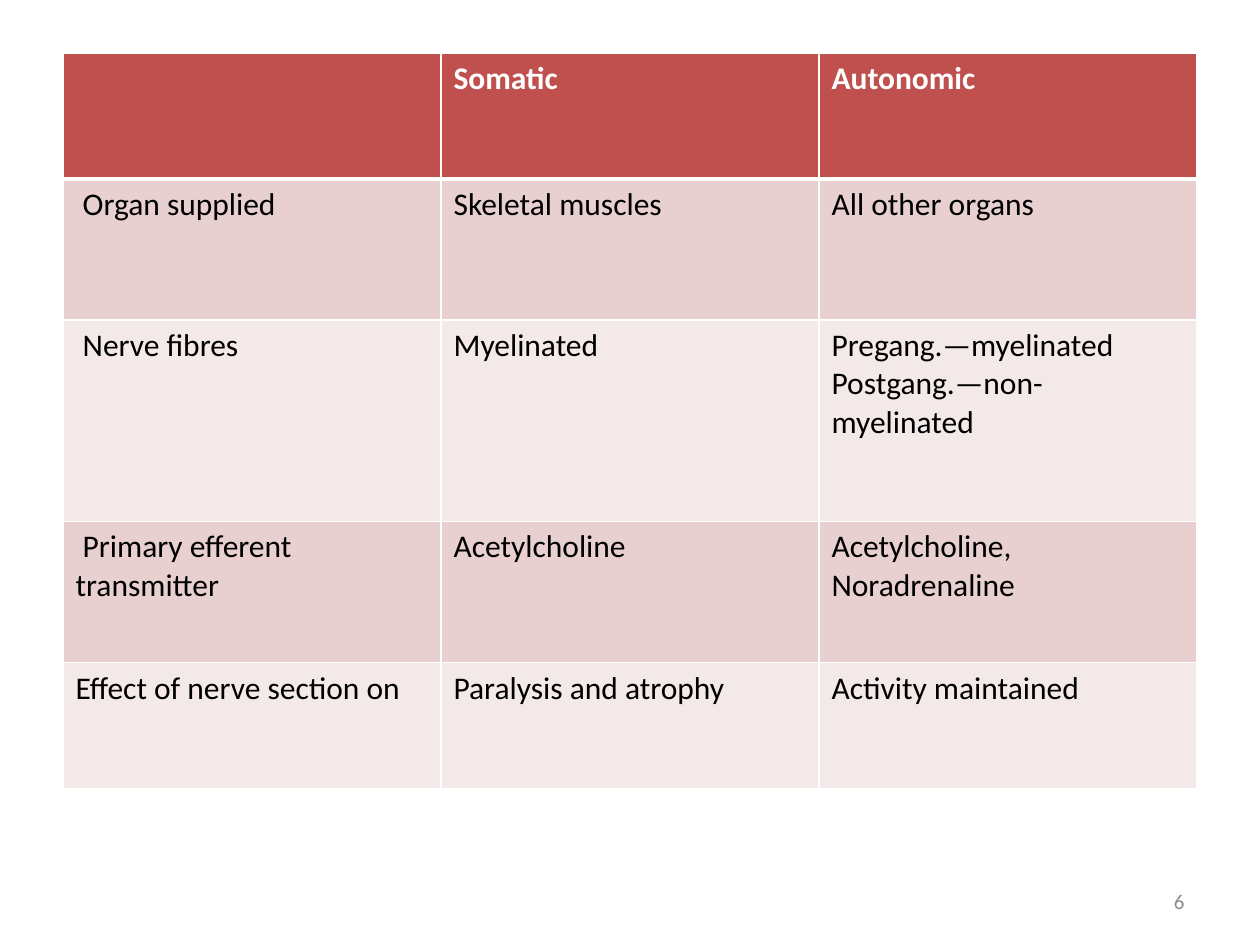
"""Build a slide comparing the somatic and autonomic nervous systems."""
from lxml.etree import SubElement
from pptx import Presentation
from pptx.dml.color import RGBColor
from pptx.enum.text import MSO_ANCHOR, PP_ALIGN
from pptx.oxml.ns import qn
from pptx.util import Inches, Pt

ROWS = [
    ("", "Somatic", "Autonomic"),
    (" Organ supplied", "Skeletal muscles", "All other organs"),
    (" Nerve fibres", "Myelinated", "Pregang.—myelinated\nPostgang.—non-myelinated"),
    (" Primary efferent transmitter", "Acetylcholine", "Acetylcholine, Noradrenaline"),
    ("Effect of nerve section on", "Paralysis and atrophy", "Activity maintained"),
]
ROW_HEIGHTS = [1, 1.12, 1.6, 1.12, 1]
COLUMN_WIDTH = 3
HEADER_FILL = "C0504D"
BAND_FILLS = ["E8D0D0", "F4E9E9"]
WHITE, BLACK, GRAY = "FFFFFF", "000000", "8C8C8C"


def color(value):
    return RGBColor.from_string(value)


def write_text(text_frame, text, size=18, fill=BLACK, bold=False, align=PP_ALIGN.LEFT):
    text_frame.word_wrap = True
    text_frame.text = text
    for paragraph in text_frame.paragraphs:
        paragraph.alignment = align
        font = paragraph.font
        font.name, font.size, font.bold = "Calibri", Pt(size), bold
        font.color.rgb = color(fill)
        for run in paragraph.runs:
            run.font.name, run.font.size, run.font.bold = "Calibri", Pt(size), bold
            run.font.color.rgb = color(fill)


def set_borders(cell, **widths):
    properties = cell._tc.get_or_add_tcPr()
    for side in ("L", "R", "T", "B"):
        line = SubElement(properties, qn(f"a:ln{side}"), w=str(Pt(widths.get(side, 1))))
        fill = SubElement(line, qn("a:solidFill"))
        SubElement(fill, qn("a:srgbClr"), val=WHITE)


def add_comparison_table(slide):
    column_count = len(ROWS[0])
    table = slide.shapes.add_table(
        len(ROWS), column_count, Inches(0.5), Inches(0.42),
        Inches(COLUMN_WIDTH * column_count), Inches(sum(ROW_HEIGHTS)),
    ).table
    for column in table.columns:
        column.width = Inches(COLUMN_WIDTH)
    for row_index, (texts, height) in enumerate(zip(ROWS, ROW_HEIGHTS)):
        header = row_index == 0
        table.rows[row_index].height = Inches(height)
        for column_index, text in enumerate(texts):
            cell = table.cell(row_index, column_index)
            set_borders(cell, B=3 if header else 1, T=3 if row_index == 1 else 1)
            cell.fill.solid()
            cell.fill.fore_color.rgb = color(HEADER_FILL if header else BAND_FILLS[(row_index - 1) % 2])
            write_text(cell.text_frame, text, fill=WHITE if header else BLACK, bold=header)


def add_page_number(slide, number):
    box = slide.shapes.add_textbox(Inches(7.17), Inches(6.95), Inches(2.33), Inches(0.4))
    box.text_frame.vertical_anchor = MSO_ANCHOR.MIDDLE
    write_text(box.text_frame, number, size=12, fill=GRAY, align=PP_ALIGN.RIGHT)


def main():
    presentation = Presentation()
    presentation.slide_width, presentation.slide_height = Inches(10), Inches(7.5)
    slide = presentation.slides.add_slide(presentation.slide_layouts[6])
    add_comparison_table(slide)
    add_page_number(slide, "6")
    presentation.save("out.pptx")


if __name__ == "__main__":
    main()
